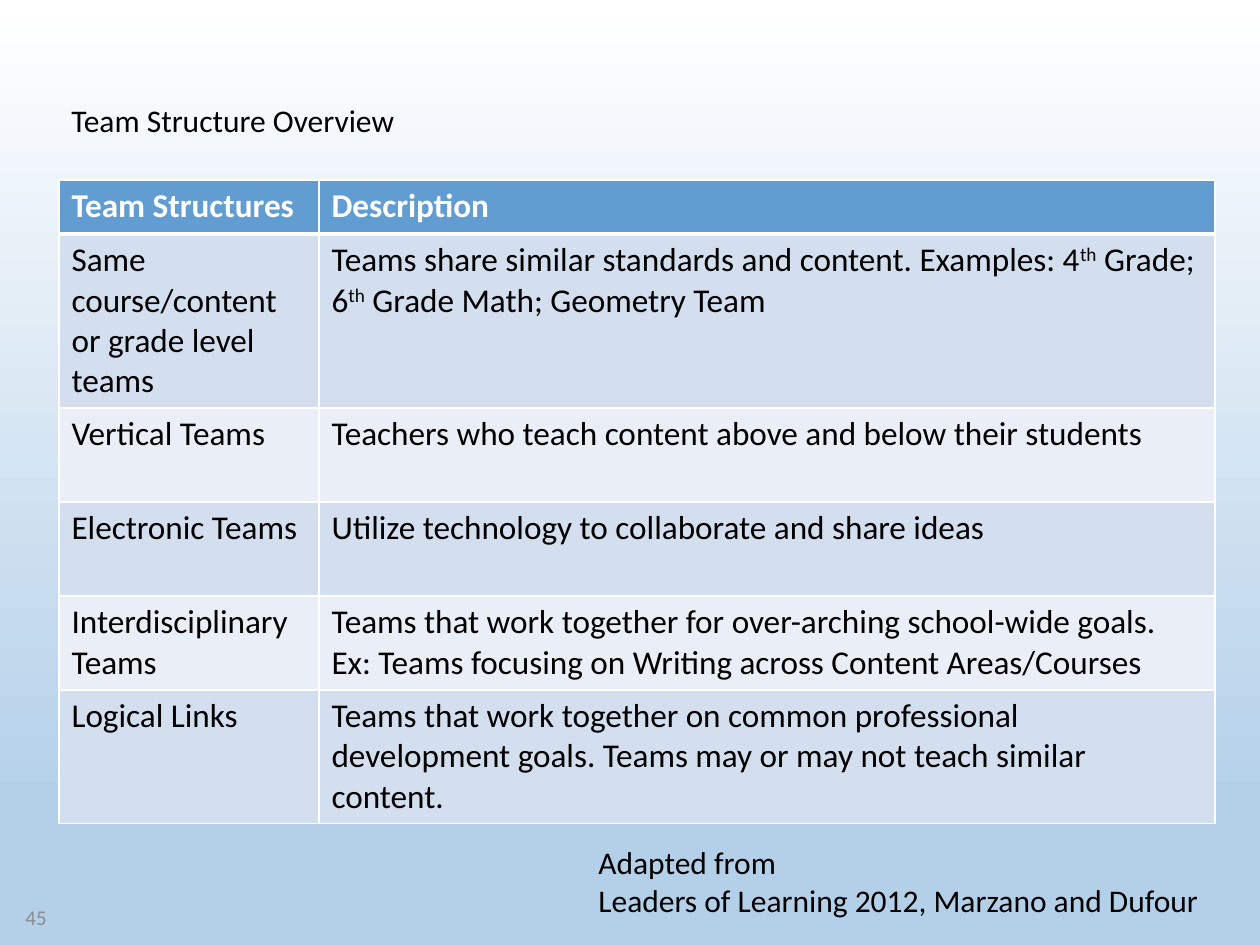
import dataclasses
import typing

import lxml.etree
import pptx
import pptx.dml.color
import pptx.enum.text
import pptx.oxml.ns
import pptx.util

EMU_PER_PIXEL = 914400 / 126
ANCHOR = pptx.enum.text.MSO_ANCHOR
ALIGN = pptx.enum.text.PP_ALIGN
AUTO_SIZE = pptx.enum.text.MSO_AUTO_SIZE


@dataclasses.dataclass(frozen=True)
class Theme:
    font: str = "Calibri"
    black: str = "000000"
    white: str = "FFFFFF"
    grey: str = "8C8C8C"
    header: str = "629DD1"
    bands: tuple[str, str] = ("D3DFEE", "EAEFF7")
    background_end: str = "B4D0E9"
    table_size: int = 19
    text_size: int = 18
    number_size: int = 12
    thin_border: int = 1
    thick_border: int = 3


@dataclasses.dataclass(frozen=True)
class Label:
    lines: tuple[str, ...]
    left: int
    top: int
    width: int
    height: int
    size: int
    color: str
    frame_format: dict[str, typing.Any]
    alignment: typing.Any = ALIGN.LEFT


@dataclasses.dataclass(frozen=True)
class TeamRow:
    name: str
    description: str
    height: int


THEME = Theme()
GROWING = {"word_wrap": False, "auto_size": AUTO_SIZE.SHAPE_TO_FIT_TEXT}
CENTERED = {"word_wrap": True, "vertical_anchor": ANCHOR.MIDDLE}

LABELS = (
    Label(("Adapted from", "Leaders of Learning 2012, Marzano and Dufour"),
          586, 837, 634, 89, THEME.text_size, THEME.black, GROWING),
    Label(("Team Structure Overview",),
          59, 95, 355, 50, THEME.text_size, THEME.black, GROWING),
    Label(("45",), 4, 892, 55, 50, THEME.number_size, THEME.grey, CENTERED, ALIGN.RIGHT),
)

# A caret pair encloses superscript text
ROWS = (
    TeamRow("Team Structures", "Description", 54),
    TeamRow("Same course/content or grade level teams",
            "Teams share similar standards and content. Examples: "
            "4^th^ Grade; 6^th^ Grade Math; Geometry Team", 135),
    TeamRow("Vertical Teams",
            "Teachers who teach content above and below their students", 94),
    TeamRow("Electronic Teams", "Utilize technology to collaborate and share ideas", 94),
    TeamRow("Interdisciplinary Teams",
            "Teams that work together for over-arching school-wide goals. "
            "Ex: Teams focusing on Writing across Content Areas/Courses", 94),
    TeamRow("Logical Links",
            "Teams that work together on common professional development goals. "
            "Teams may or may not teach similar content.", 132),
)
TABLE_LEFT, TABLE_TOP = 59, 180
COLUMN_WIDTHS = (260, 896)


def px(length: int) -> pptx.util.Emu:
    return pptx.util.Emu(round(length * EMU_PER_PIXEL))


def rgb(value: str) -> pptx.dml.color.RGBColor:
    return pptx.dml.color.RGBColor.from_string(value)


def apply_format(target: typing.Any, values: dict[str, typing.Any]) -> None:
    for name, value in values.items():
        setattr(target, name, value)


def write_text(paragraph: typing.Any, text: str, size: int, color: str,
               bold: bool = False) -> None:
    for index, part in enumerate(text.split("^")):
        run = paragraph.add_run()
        run.text = part
        apply_format(run.font, {"name": THEME.font, "size": pptx.util.Pt(size), "bold": bold})
        run.font.color.rgb = rgb(color)
        if index % 2:
            run._r.get_or_add_rPr().set("baseline", "30000")


def set_borders(cell: typing.Any, top: int, bottom: int) -> None:
    """Put the four lines ahead of the fill, as the schema requires."""
    qn = pptx.oxml.ns.qn
    properties = cell._tc.get_or_add_tcPr()
    widths = {"L": THEME.thin_border, "R": THEME.thin_border, "T": top, "B": bottom}
    for index, (side, width) in enumerate(widths.items()):
        line = lxml.etree.Element(qn(f"a:ln{side}"), w=str(pptx.util.Pt(width)))
        fill = lxml.etree.SubElement(line, qn("a:solidFill"))
        lxml.etree.SubElement(fill, qn("a:srgbClr"), val=THEME.white)
        properties.insert(index, line)


def draw_background(slide: typing.Any) -> None:
    fill = slide.background.fill
    fill.gradient()
    fill.gradient_angle = 270
    stops = ((0, THEME.white), (0.85, THEME.background_end))
    for stop, (position, color) in zip(fill.gradient_stops, stops):
        stop.position = position
        stop.color.rgb = rgb(color)


def draw_table(slide: typing.Any) -> None:
    height = sum(row.height for row in ROWS)
    table = slide.shapes.add_table(
        len(ROWS), len(COLUMN_WIDTHS), px(TABLE_LEFT), px(TABLE_TOP),
        px(sum(COLUMN_WIDTHS)), px(height)).table
    for column, width in zip(table.columns, COLUMN_WIDTHS):
        column.width = px(width)
    for index, row in enumerate(ROWS):
        table.rows[index].height = px(row.height)
        is_header = index == 0
        fill_color = THEME.header if is_header else THEME.bands[(index - 1) % 2]
        text_color = THEME.white if is_header else THEME.black
        top = THEME.thick_border if index == 1 else THEME.thin_border
        bottom = THEME.thick_border if is_header else THEME.thin_border
        for cell, text in zip(table.rows[index].cells, (row.name, row.description)):
            cell.fill.solid()
            cell.fill.fore_color.rgb = rgb(fill_color)
            set_borders(cell, top, bottom)
            write_text(cell.text_frame.paragraphs[0], text, THEME.table_size,
                       text_color, is_header)


def draw_label(slide: typing.Any, label: Label) -> None:
    shape = slide.shapes.add_textbox(
        px(label.left), px(label.top), px(label.width), px(label.height))
    frame = shape.text_frame
    apply_format(frame, label.frame_format)
    for index, line in enumerate(label.lines):
        paragraph = frame.add_paragraph() if index else frame.paragraphs[0]
        paragraph.alignment = label.alignment
        write_text(paragraph, line, label.size, label.color)


def main() -> None:
    presentation = pptx.Presentation()
    apply_format(presentation, {"slide_width": px(1260), "slide_height": px(945)})
    slide = presentation.slides.add_slide(presentation.slide_layouts[6])
    draw_background(slide)
    draw_table(slide)
    for label in LABELS:
        draw_label(slide, label)
    presentation.save("out.pptx")


if __name__ == "__main__":
    main()
